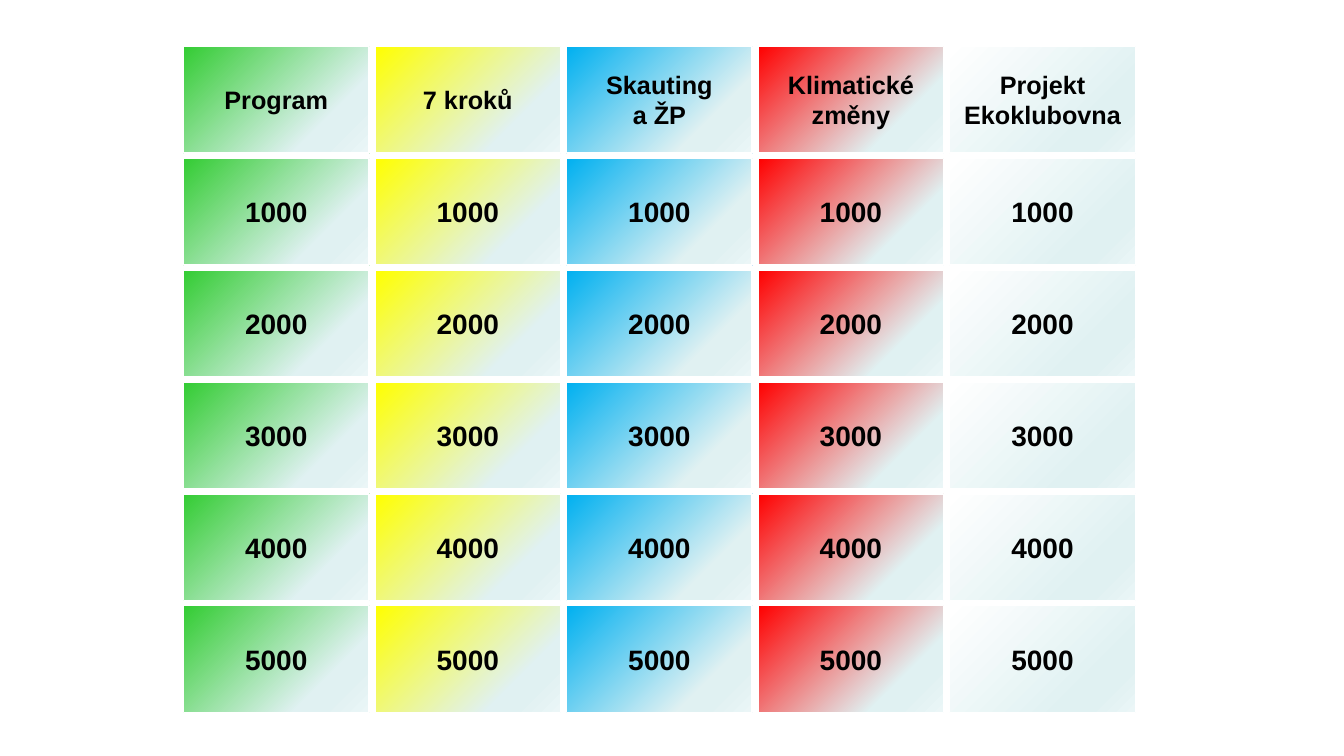
from dataclasses import dataclass
from lxml.etree import SubElement
from pptx import Presentation
from pptx.dml.color import RGBColor
from pptx.enum.shapes import MSO_SHAPE
from pptx.enum.text import MSO_ANCHOR, PP_ALIGN
from pptx.oxml.ns import qn
from pptx.util import Inches, Pt

# Content: topics with their colours, and the points below each
TOPICS = [
    ("Program", "33CC33"),
    ("7 kroků", "FFFF00"),
    ("Skauting\va ŽP", "00B0F0"),
    ("Klimatické\vzměny", "FF0000"),
    ("Projekt\vEkoklubovna", "FFFFFF"),
]
POINTS = ["1000", "2000", "3000", "4000", "5000"]


@dataclass
class Theme:
    font: str = "Arial"
    ink: str = "000000"
    edge: str = "FFFFFF"
    fade: tuple = ((74, "E0F1F2"), (83, "E0F1F2"), (100, "EBF6F7"))
    head: int = 18
    body: int = 20


# Grid in inches: first cell, step between cells, cell size
LEFT, TOP = 1.82, 0.46
STEP_X, STEP_Y = 1.9, 1.11
WIDE, HIGH = 1.84, 1.06


def shade(shape, color, theme):
    """Blend from the topic colour at top left to the pale fade."""
    shape.fill.gradient()
    shape.fill.gradient_angle = 315
    stops = shape.fill._xPr.find(qn("a:gradFill")).find(qn("a:gsLst"))
    for stop in list(stops):
        stops.remove(stop)
    for share, tint in ((0, color), *theme.fade):
        stop = SubElement(stops, qn("a:gs"), pos=str(share * 1000))
        SubElement(stop, qn("a:srgbClr"), val=tint)


def add_cell(slide, col, row, text, color, size, theme):
    cell = slide.shapes.add_shape(
        MSO_SHAPE.ACTION_BUTTON_CUSTOM,
        Inches(LEFT + col * STEP_X), Inches(TOP + row * STEP_Y),
        Inches(WIDE), Inches(HIGH))
    cell.shadow.inherit = False
    shade(cell, color, theme)
    cell.line.color.rgb = RGBColor.from_string(theme.edge)
    cell.line.width = Pt(1)
    # Label
    frame = cell.text_frame
    frame.text = text
    frame.word_wrap = False
    frame.vertical_anchor = MSO_ANCHOR.MIDDLE
    para = frame.paragraphs[0]
    para.alignment = PP_ALIGN.CENTER
    for run in para.runs:
        run.font.name = theme.font
        run.font.size = Pt(size)
        run.font.bold = True
        run.font.color.rgb = RGBColor.from_string(theme.ink)


def main():
    theme = Theme()
    deck = Presentation()
    deck.slide_width, deck.slide_height = Inches(13.33), Inches(7.5)
    slide = deck.slides.add_slide(deck.slide_layouts[6])
    # Board: one column per topic, its name above its points
    for col, (topic, color) in enumerate(TOPICS):
        for row, text in enumerate([topic, *POINTS]):
            size = theme.body if row else theme.head
            add_cell(slide, col, row, text, color, size, theme)
    deck.save("out.pptx")


if __name__ == "__main__":
    main()
